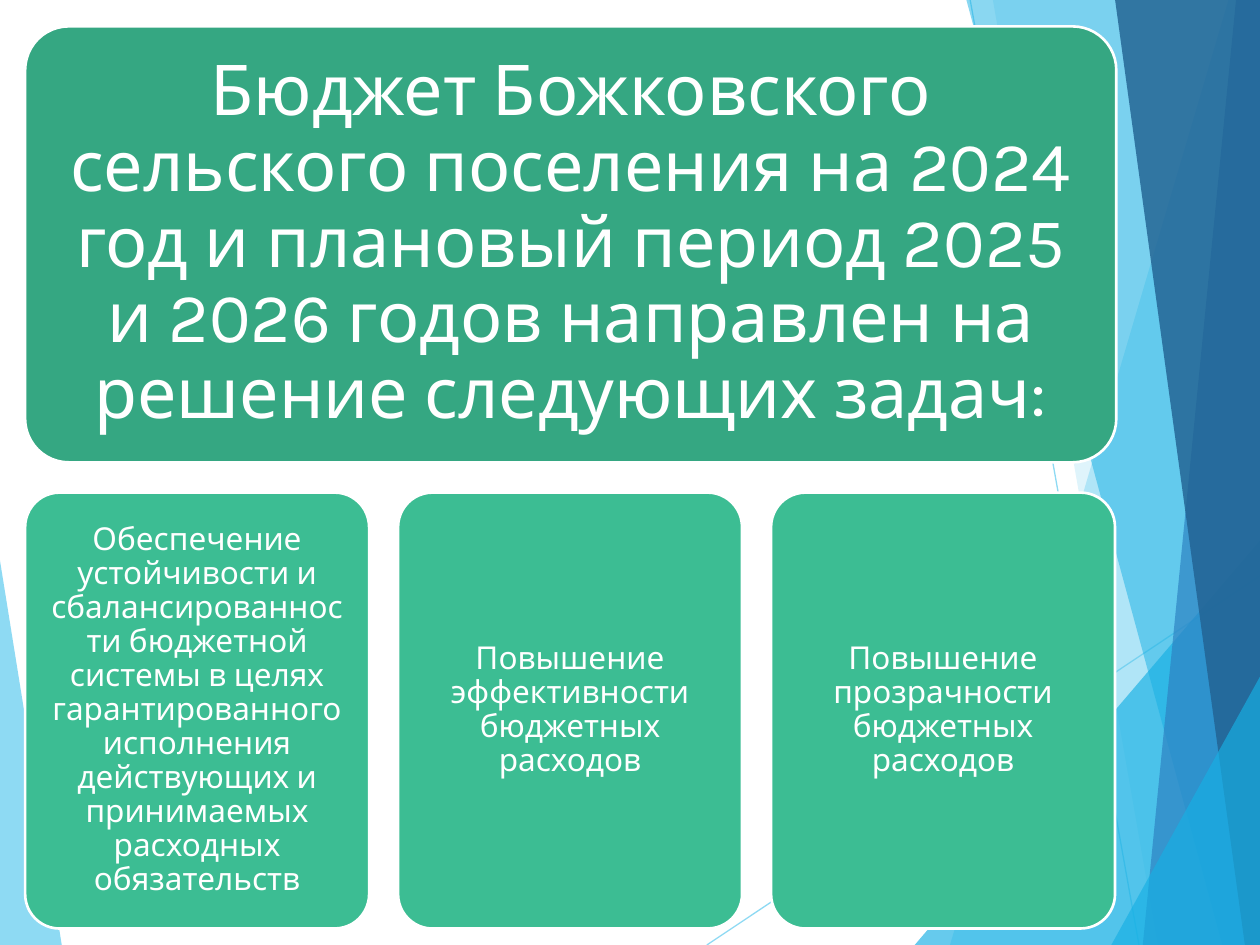
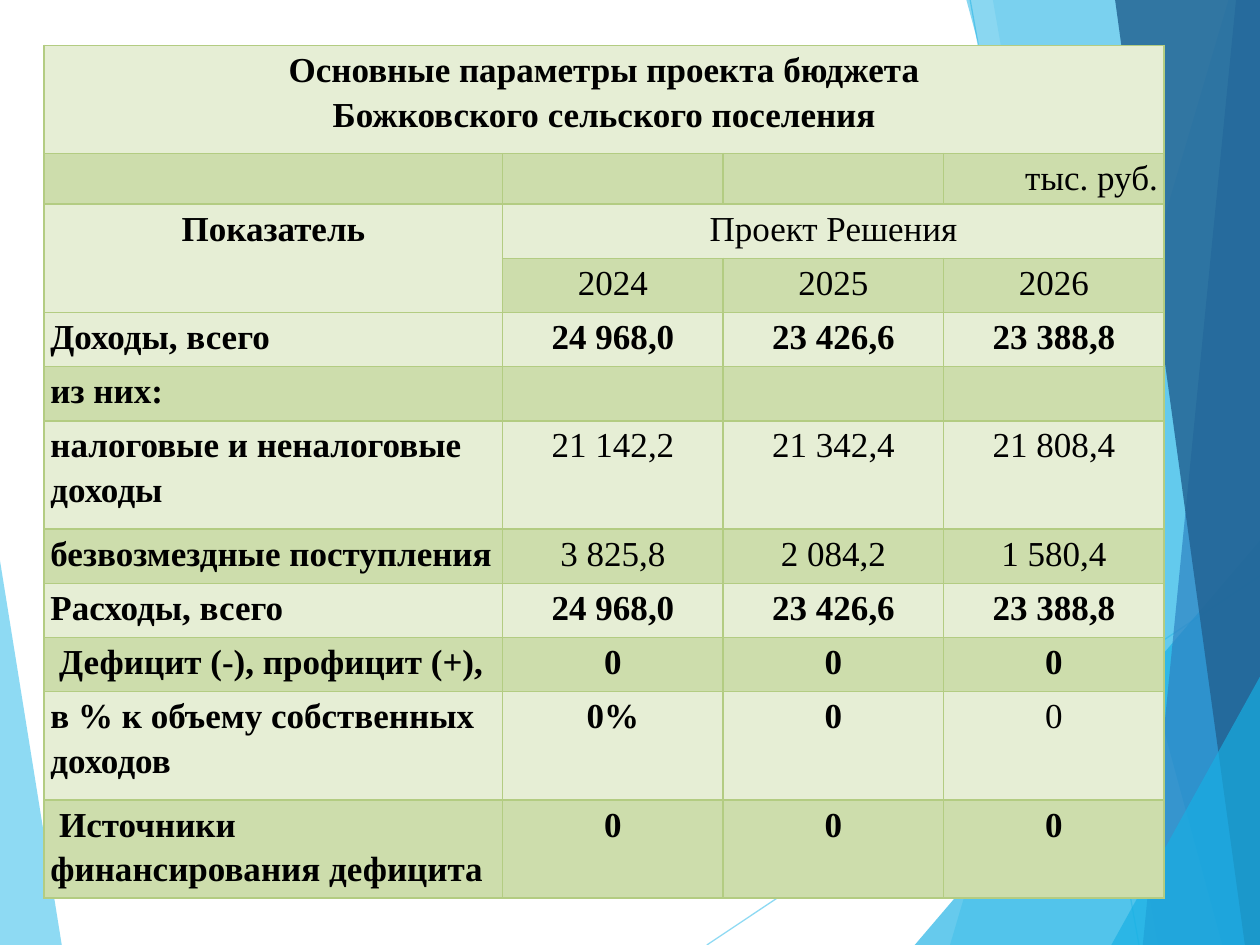
from lxml import etree
from pptx import Presentation
from pptx.dml.color import RGBColor
from pptx.enum.shapes import MSO_CONNECTOR, MSO_SHAPE
from pptx.enum.text import MSO_ANCHOR, PP_ALIGN
from pptx.oxml.ns import qn
from pptx.util import Inches, Pt

STRAIGHT = MSO_CONNECTOR.STRAIGHT
ROUNDED = MSO_SHAPE.ROUNDED_RECTANGLE
MIDDLE, TOP = MSO_ANCHOR.MIDDLE, MSO_ANCHOR.TOP
LEFT, CENTER, RIGHT = PP_ALIGN.LEFT, PP_ALIGN.CENTER, PP_ALIGN.RIGHT

COLORS = {
    "sky": "5FCBEF", "cyan": "17B0E4", "blue": "2E83C3", "navy": "226292",
    "heading": "35A782", "task": "3CBD93", "white": "FFFFFF", "black": "000000",
    "band_light": "E6EED5", "band_dark": "CDDDAC", "border": "B3CC82",
}
RGB = {name: RGBColor.from_string(value) for name, value in COLORS.items()}
MARGINS = ("margin_left", "margin_top", "margin_right", "margin_bottom")

# Decoration shared by both slides: colour, opacity in percent, corners
RAYS = [((5.61, 7.5), (10, 4.57)), ((7.7, 0), (9.04, 7.5))]
FACETS = [
    ("sky", 70, [(0, 4.45), (0.49, 7.5), (0, 7.5)]),
    ("sky", 36, [(9.75, 0), (7.54, 7.5), (10, 7.5), (10, 0)]),
    ("sky", 20, [(7.88, 0), (9.19, 7.5), (10, 7.5), (10, 0)]),
    ("cyan", 66, [(7.26, 7.5), (10, 4.29), (10, 7.5)]),
    ("cyan", 50, [(7.67, 0), (9.7, 7.5), (10, 7.5), (10, 0)]),
    ("blue", 70, [(9.81, 0), (9.07, 7.5), (10, 7.5), (10, 0)]),
    ("navy", 82, [(8.85, 0), (9.88, 7.5), (10, 7.5), (10, 0)]),
    ("cyan", 66, [(8.82, 7.5), (10, 5.37), (10, 7.5)]),
]


def set_opacity(shape, percent):
    color = shape._element.spPr.find(".//" + qn("a:srgbClr"))
    etree.SubElement(color, qn("a:alpha"), val=str(percent * 1000))


def add_decorated_slide(prs):
    slide = prs.slides.add_slide(prs.slide_layouts[6])
    for start, end in RAYS:
        ray = slide.shapes.add_connector(STRAIGHT, *map(Inches, start + end))
        ray.line.color.rgb = RGB["sky"]
        ray.line.width = Pt(0.75)
        set_opacity(ray, 70)
        etree.SubElement(ray._element.spPr, qn("a:effectLst"))
    for color, opacity, corners in FACETS:
        first, *others = [(Inches(x), Inches(y)) for x, y in corners]
        outline = slide.shapes.build_freeform(*first)
        outline.add_line_segments(others, close=True)
        facet = outline.convert_to_shape()
        facet.shadow.inherit = False
        facet.fill.solid()
        facet.fill.fore_color.rgb = RGB[color]
        facet.line.fill.background()
        set_opacity(facet, opacity)
    return slide


prs = Presentation()
prs.slide_width, prs.slide_height = Inches(10), Inches(7.5)

# Slide 1: budget heading above its three tasks
tasks_slide = add_decorated_slide(prs)
TASKS = [
    "Обеспечение устойчивости и сбалансированности бюджетной системы в целях "
    "гарантированного исполнения действующих и принимаемых расходных обязательств",
    "Повышение эффективности бюджетных расходов",
    "Повышение прозрачности бюджетных расходов",
]
cards = [("Бюджет Божковского сельского поселения на 2024 год и плановый период "
          "2025 и 2026 годов направлен на решение следующих задач:",
          0.2, 0.21, 8.66, "heading", 40, 0.17)]
cards += [(task, 0.2 + 2.96 * i, 3.91, 2.73, "task", 18, 0.07)
          for i, task in enumerate(TASKS)]

for text, left, top, width, color, size, inset in cards:
    card = tasks_slide.shapes.add_shape(
        ROUNDED, Inches(left), Inches(top), Inches(width), Inches(3.46))
    card.adjustments[0] = 0.1
    card.shadow.inherit = False
    card.fill.solid()
    card.fill.fore_color.rgb = RGB[color]
    card.line.color.rgb = RGB["white"]
    card.line.width = Pt(1.5)
    frame = card.text_frame
    frame.word_wrap = True
    frame.vertical_anchor = MIDDLE
    for margin in MARGINS:
        setattr(frame, margin, Inches(inset))
    paragraph = frame.paragraphs[0]
    paragraph.text = text
    paragraph.alignment = CENTER
    paragraph.line_spacing = 0.9
    for name, value in {"name": "Karla", "size": Pt(size)}.items():
        setattr(paragraph.font, name, value)
    paragraph.font.color.rgb = RGB["white"]

# Slide 2: main budget figures
budget_slide = add_decorated_slide(prs)
BUDGET = [
    ["Основные параметры проекта бюджета\nБожковского сельского поселения", "", "", ""],
    ["", "", "", "тыс. руб."],
    ["Показатель", "Проект Решения", "", ""],
    ["", "2024", "2025", "2026"],
    ["Доходы, всего", "24 968,0", "23 426,6", "23 388,8"],
    ["из них:", "", "", ""],
    ["налоговые и неналоговые доходы", "21 142,2", "21 342,4", "21 808,4"],
    ["безвозмездные поступления", "3 825,8", "2 084,2", "1 580,4"],
    ["Расходы, всего", "24 968,0", "23 426,6", "23 388,8"],
    [" Дефицит (-), профицит (+),", "0", "0", "0"],
    ["в % к объему собственных доходов", "0%", "0", "0"],
    [" Источники финансирования дефицита", "0", "0", "0"],
]
COLUMN_WIDTHS = [3.64, 1.75, 1.75, 1.75]
ROW_HEIGHTS = [0.86, 0.4, 0.43, 0.43, 0.43, 0.43, 0.86, 0.43, 0.43, 0.43, 0.86, 0.78]
MERGES = [((0, 0), (0, 3)), ((2, 0), (3, 0)), ((2, 1), (2, 3))]
BOLD_ROWS = {4, 8, 9, 10, 11}
PLAIN_CELL = (10, 3)

budget = budget_slide.shapes.add_table(
    len(BUDGET), len(COLUMN_WIDTHS), Inches(0.35), Inches(0.36),
    Inches(sum(COLUMN_WIDTHS)), Inches(sum(ROW_HEIGHTS))).table
budget.first_row = budget.horz_banding = False
for column, width in zip(budget.columns, COLUMN_WIDTHS):
    column.width = Inches(width)
for row, height in zip(budget.rows, ROW_HEIGHTS):
    row.height = Inches(height)
for first, last in MERGES:
    budget.cell(*first).merge(budget.cell(*last))

for r, values in enumerate(BUDGET):
    for c, value in enumerate(values):
        cell = budget.cell(r, c)
        cell.text = value
        cell.vertical_anchor = TOP
        for margin, inset in zip(MARGINS, (0.05, 0, 0.05, 0)):
            setattr(cell, margin, Inches(inset))
        bold = c == 0 or (r in BOLD_ROWS and (r, c) != PLAIN_CELL)
        if r == 1:
            alignment = RIGHT
        else:
            alignment = LEFT if c == 0 and r > 3 else CENTER
        for paragraph in cell.text_frame.paragraphs:
            paragraph.alignment = alignment
            paragraph.line_spacing = 1.15
            font_format = {"name": "Times New Roman", "bold": bold,
                           "size": Pt(20 if value else 18)}
            for name, setting in font_format.items():
                setattr(paragraph.font, name, setting)
            paragraph.font.color.rgb = RGB["black"]
        # Borders come before the fill in the cell properties
        properties = cell._tc.get_or_add_tcPr()
        for side in ("a:lnL", "a:lnR", "a:lnT", "a:lnB"):
            border = etree.SubElement(properties, qn(side), w=str(Pt(1)))
            paint = etree.SubElement(border, qn("a:solidFill"))
            etree.SubElement(paint, qn("a:srgbClr"), val=COLORS["border"])
        cell.fill.solid()
        cell.fill.fore_color.rgb = RGB["band_dark" if r % 2 else "band_light"]

prs.save("out.pptx")
